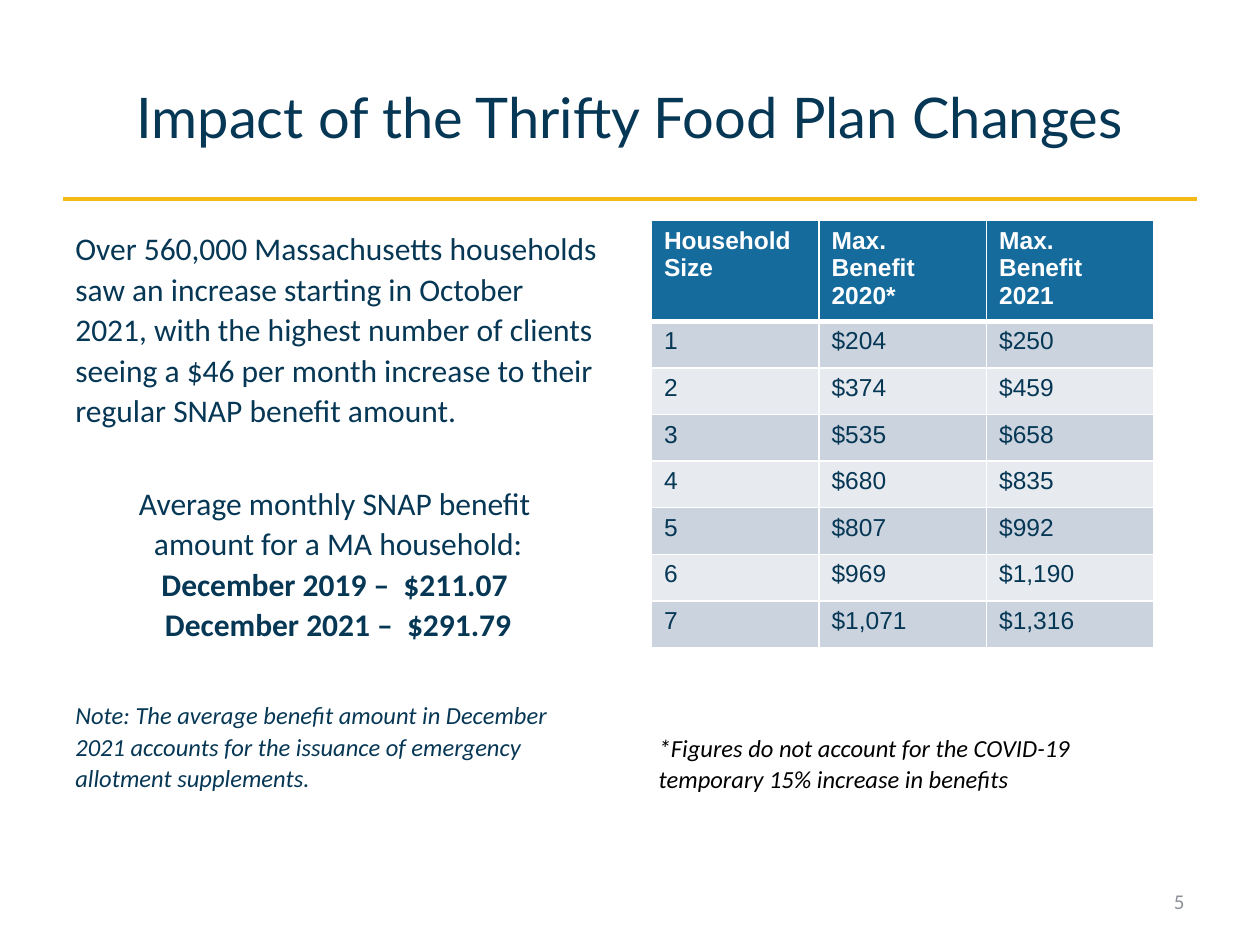
import dataclasses

import lxml.etree
import pptx
import pptx.dml.color
import pptx.enum.shapes
import pptx.enum.text
import pptx.oxml.ns
import pptx.util

Inches = pptx.util.Inches
Pt = pptx.util.Pt
ALIGN = pptx.enum.text.PP_ALIGN
ANCHOR = pptx.enum.text.MSO_ANCHOR
qn = pptx.oxml.ns.qn


@dataclasses.dataclass(frozen=True)
class Theme:
    navy: str = "063755"
    gold: str = "F6BA16"
    header: str = "166B9D"
    bands: tuple = ("CAD3DE", "E7EAEF")
    white: str = "FFFFFF"
    black: str = "000000"
    gray: str = "8C9199"
    title_font: str = "Lato"
    body_font: str = "Calibri"
    table_font: str = "Arial"
    title_size: int = 32
    body_size: int = 18
    note_size: int = 14
    number_size: int = 12
    line_spacing: float = 1.07


THEME = Theme()

BODY = [
    ("Over 560,000 Massachusetts households saw an increase starting in October 2021, "
     "with the highest number of clients seeing a $46 per month increase to their "
     "regular SNAP benefit amount.", {}),
    ("Average monthly SNAP benefit ", {"align": ALIGN.CENTER, "before": 30}),
    ("amount for a MA household:", {"align": ALIGN.CENTER}),
    ("December 2019 –  $211.07 ", {"align": ALIGN.CENTER, "bold": True}),
    ("December 2021 –  $291.79", {"align": ALIGN.CENTER, "bold": True}),
    ("Note: The average benefit amount in December 2021 accounts for the issuance of "
     "emergency allotment supplements.",
     {"size": THEME.note_size, "italic": True, "before": 31.5}),
]
FOOTNOTE = "*Figures do not account for the COVID-19 temporary 15% increase in benefits"
BENEFITS = [
    ("Household Size", "Max. Benefit 2020*", "Max. Benefit 2021"),
    ("1", "$204", "$250"),
    ("2", "$374", "$459"),
    ("3", "$535", "$658"),
    ("4", "$680", "$835"),
    ("5", "$807", "$992"),
    ("6", "$969", "$1,190"),
    ("7", "$1,071", "$1,316"),
]


def rgb(color):
    return pptx.dml.color.RGBColor.from_string(color)


def write(p, text, size=THEME.body_size, font=THEME.body_font, color=THEME.navy,
          bold=False, italic=False, align=ALIGN.LEFT, before=0, spacing=THEME.line_spacing):
    p.text = text
    p.alignment = align
    p.line_spacing = spacing
    p.space_before = Pt(before)
    for r in p.runs:
        r.font.size = Pt(size)
        r.font.name = font
        r.font.color.rgb = rgb(color)
        r.font.bold = bold
        r.font.italic = italic


def add_text(s, box, paragraphs, anchor=ANCHOR.TOP):
    tf = s.shapes.add_textbox(*map(Inches, box)).text_frame
    tf.word_wrap = True
    tf.vertical_anchor = anchor
    for i, (text, style) in enumerate(paragraphs):
        p = tf.add_paragraph() if i else tf.paragraphs[0]
        write(p, text, **style)


def add_rule(s, x1, x2, y):
    line = s.shapes.add_connector(pptx.enum.shapes.MSO_CONNECTOR.STRAIGHT,
                                  Inches(x1), Inches(y), Inches(x2), Inches(y))
    line.line.color.rgb = rgb(THEME.gold)
    line.line.width = Pt(2.25)
    lxml.etree.SubElement(line._element.spPr, qn("a:effectLst"))


def set_borders(cell, widths):
    tcPr = cell._tc.get_or_add_tcPr()
    for i, (side, width) in enumerate(widths.items()):
        ln = lxml.etree.Element(qn(f"a:ln{side}"), w=str(Pt(width)))
        fill = lxml.etree.SubElement(ln, qn("a:solidFill"))
        lxml.etree.SubElement(fill, qn("a:srgbClr"), val=THEME.white)
        tcPr.insert(i, ln)


def add_benefit_table(s, left, top, col_width, header_height, row_height):
    rows, cols = len(BENEFITS), len(BENEFITS[0])
    height = header_height + row_height * (rows - 1)
    table = s.shapes.add_table(rows, cols, Inches(left), Inches(top),
                               Inches(col_width * cols), Inches(height)).table
    for col in table.columns:
        col.width = Inches(col_width)
    for i, values in enumerate(BENEFITS):
        is_header = i == 0
        table.rows[i].height = Inches(header_height if is_header else row_height)
        for j, value in enumerate(values):
            cell = table.cell(i, j)
            cell.fill.solid()
            cell.fill.fore_color.rgb = rgb(THEME.header if is_header else THEME.bands[(i - 1) % 2])
            write(cell.text_frame.paragraphs[0], value, size=THEME.note_size,
                  font=THEME.table_font, color=THEME.white if is_header else THEME.navy,
                  bold=is_header, spacing=1.0)
            set_borders(cell, {"L": 1, "R": 1, "T": 3 if i == 1 else 1, "B": 3 if is_header else 1})


def main():
    prs = pptx.Presentation()
    prs.slide_width, prs.slide_height = Inches(10), Inches(7.5)
    s = prs.slides.add_slide(prs.slide_layouts[6])
    add_rule(s, 0.5, 9.5, 1.58)
    add_text(s, (0.5, 0.3, 9, 1.25),
             [("Impact of the Thrifty Food Plan Changes",
               {"size": THEME.title_size, "font": THEME.title_font,
                "align": ALIGN.CENTER, "spacing": 1.0})], ANCHOR.MIDDLE)
    add_text(s, (0.5, 1.75, 4.37, 4.95), BODY)
    add_text(s, (7.17, 6.95, 2.33, 0.4),
             [("5", {"size": THEME.number_size, "color": THEME.gray,
                     "align": ALIGN.RIGHT, "spacing": 1.0})], ANCHOR.MIDDLE)
    add_benefit_table(s, 5.17, 1.75, 1.33, 0.75, 0.37)
    add_text(s, (5.13, 5.75, 4.23, 0.59),
             [(FOOTNOTE, {"size": THEME.note_size, "color": THEME.black, "italic": True})])
    prs.save("out.pptx")


if __name__ == "__main__":
    main()
